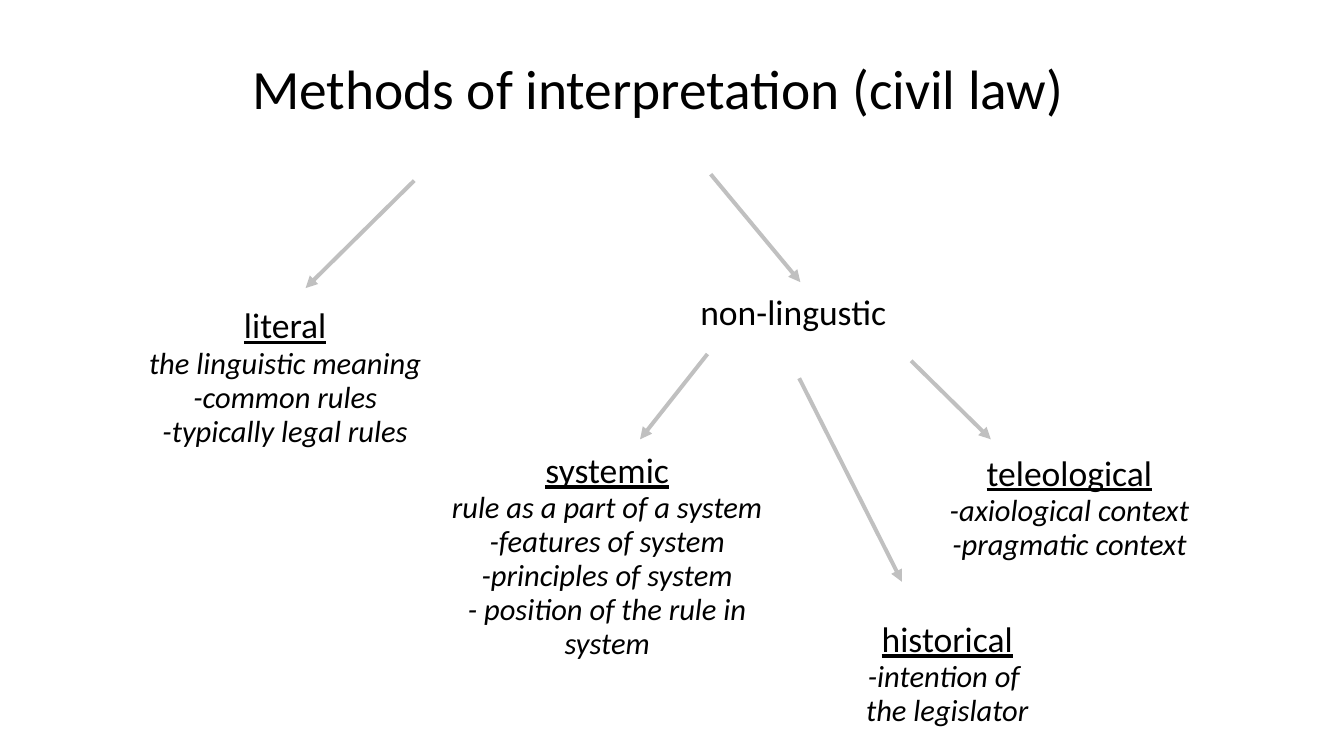
from dataclasses import dataclass

from lxml.etree import SubElement
from pptx import Presentation
from pptx.dml.color import RGBColor
from pptx.enum.shapes import MSO_CONNECTOR
from pptx.enum.text import MSO_ANCHOR, MSO_AUTO_SIZE, PP_ALIGN
from pptx.oxml.ns import qn
from pptx.slide import Slide
from pptx.text.text import TextFrame, _Paragraph
from pptx.util import Cm, Pt

BLACK = RGBColor(0x00, 0x00, 0x00)
SILVER = RGBColor(0xC0, 0xC0, 0xC0)
FONT = "Calibri"
LINE_SPACING = 0.93
TITLE_SIZE, METHOD_SIZE, DETAIL_SIZE = 39.6, 25.4, 21.8


@dataclass(frozen=True)
class Method:
    heading: str
    left: float
    top: float
    width: float
    height: float
    details: tuple[str, ...] = ()


@dataclass(frozen=True)
class Arrow:
    start: tuple[float, float]
    end: tuple[float, float]


METHODS = (
    Method("literal", 3.23, 7.59, 7.92, 3.86,
           ("the linguistic meaning", "-common rules", "-typically legal rules")),
    Method("non-lingustic", 17.37, 7.26, 5.59, 1.32),
    Method("systemic", 10.44, 11.23, 9.73, 4.72,
           ("rule as a part of a system", "-features of system",
            "-principles of system", "- position of the rule in system")),
    Method("historical", 20.14, 15.49, 7.47, 3.3,
           ("-intention of \nthe legislator",)),
    Method("teleological", 23.22, 11.3, 7.47, 3.99,
           ("-axiological context", "-pragmatic context")),
)

ARROWS = (
    Arrow((10.44, 4.55), (7.7, 7.26)),
    Arrow((17.91, 4.39), (20.17, 7.11)),
    Arrow((17.83, 8.92), (16.13, 11.07)),
    Arrow((22.96, 9.09), (24.97, 11.07)),
    Arrow((20.14, 9.53), (22.73, 14.66)),
)


def write(paragraph: _Paragraph, text: str, size: float, align: PP_ALIGN,
          underline: bool = False, italic: bool = False) -> None:
    paragraph.alignment = align
    paragraph.line_spacing = LINE_SPACING
    for index, line in enumerate(text.split("\n")):
        if index:
            paragraph.add_line_break()
        run = paragraph.add_run()
        run.text = line
        run.font.name = FONT
        run.font.size = Pt(size)
        run.font.color.rgb = BLACK
        run.font.underline = underline
        run.font.italic = italic


def add_title(slide: Slide, text: str) -> None:
    title = slide.shapes.title
    title.left, title.top = Cm(6.1), Cm(0.71)
    title.width, title.height = Cm(21.69), Cm(3.18)
    frame = title.text_frame
    frame.auto_size = MSO_AUTO_SIZE.NONE
    frame.vertical_anchor = MSO_ANCHOR.MIDDLE
    write(frame.paragraphs[0], text, TITLE_SIZE, PP_ALIGN.LEFT)


def set_margins(frame: TextFrame) -> None:
    frame.margin_left = frame.margin_right = Cm(0.28)
    frame.margin_top = frame.margin_bottom = Cm(0.15)


def add_method(slide: Slide, method: Method) -> None:
    box = slide.shapes.add_textbox(
        Cm(method.left), Cm(method.top), Cm(method.width), Cm(method.height))
    frame = box.text_frame
    set_margins(frame)
    has_details = bool(method.details)
    frame.word_wrap = not has_details
    align = PP_ALIGN.CENTER if has_details else PP_ALIGN.LEFT
    write(frame.paragraphs[0], method.heading, METHOD_SIZE, align,
          underline=has_details)
    for detail in method.details:
        write(frame.add_paragraph(), detail, DETAIL_SIZE, align, italic=True)


def add_arrow(slide: Slide, arrow: Arrow) -> None:
    connector = slide.shapes.add_connector(
        MSO_CONNECTOR.STRAIGHT,
        *(Cm(value) for value in arrow.start + arrow.end))
    connector.line.color.rgb = SILVER
    connector.line.width = Pt(2.83)
    properties = connector.element.spPr
    SubElement(properties.find(qn("a:ln")), qn("a:tailEnd"), type="triangle")
    SubElement(properties, qn("a:effectLst"))


def main() -> None:
    presentation = Presentation()
    presentation.slide_width = Cm(33.87)
    presentation.slide_height = Cm(19.05)
    slide = presentation.slides.add_slide(
        presentation.slide_layouts.get_by_name("Title Only"))
    add_title(slide, "Methods of interpretation (civil law)")
    for arrow in ARROWS:
        add_arrow(slide, arrow)
    for method in METHODS:
        add_method(slide, method)
    presentation.save("out.pptx")


if __name__ == "__main__":
    main()
